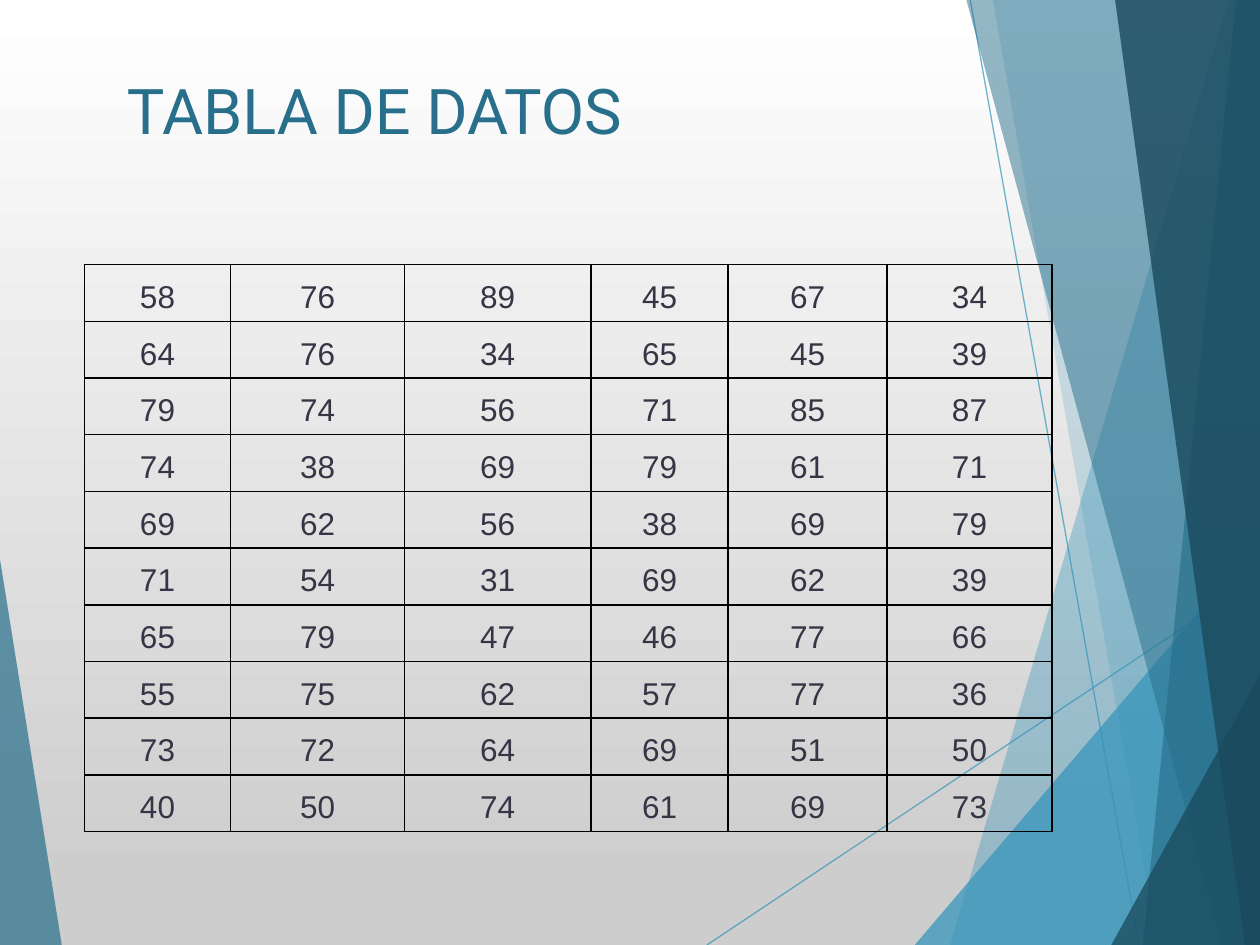
from dataclasses import dataclass

from pptx import Presentation
from pptx import util as u
from pptx.dml.color import RGBColor
from pptx.enum import text
from pptx.enum.shapes import MSO_CONNECTOR
from pptx.oxml import parse_xml
from pptx.oxml.ns import nsdecls, qn
from pptx.oxml.xmlchemy import OxmlElement

WIDTH, HEIGHT = u.Inches(10), u.Inches(7.5)
COLORS = {
    "white": "FFFFFF", "gray": "CDCDCD", "black": "000000", "ink": "373545",
    "blue": "3494BA", "teal": "276F8B", "navy": "1A4A5D",
}
Point = tuple[float, float]


@dataclass(frozen=True)
class Ray:
    """A thin line; points are percentages of the slide's width and height."""
    start: Point
    end: Point


@dataclass(frozen=True)
class Facet:
    """A translucent polygon; points are percentages of the slide's size."""
    color: str
    opacity: int
    points: tuple[Point, ...]


RAYS = (Ray((56.1, 100), (100, 61)), Ray((77, 0), (90.4, 100)))
FACETS = (
    Facet("blue", 36, ((97.5, 0), (75.4, 100), (100, 100), (100, 0))),
    Facet("blue", 20, ((78.8, 0), (91.9, 100), (100, 100), (100, 0))),
    Facet("blue", 72, ((72.6, 100), (100, 57.2), (100, 100))),
    Facet("teal", 50, ((76.7, 0), (97, 100), (100, 100), (100, 0))),
    Facet("teal", 66, ((98.1, 0), (90.7, 100), (100, 100), (100, 0))),
    Facet("navy", 80, ((88.5, 0), (98.8, 100), (100, 100), (100, 0))),
    Facet("navy", 76, ((88.2, 100), (100, 71.4), (100, 100))),
    Facet("teal", 70, ((0, 59.2), (4.9, 100), (0, 100))),
)
COLUMN_WIDTHS = (11.6, 13.8, 14.8, 10.9, 12.6, 13.1)
ROW_HEIGHT = 6
DATA = (
    (58, 76, 89, 45, 67, 34),
    (64, 76, 34, 65, 45, 39),
    (79, 74, 56, 71, 85, 87),
    (74, 38, 69, 79, 61, 71),
    (69, 62, 56, 38, 69, 79),
    (71, 54, 31, 69, 62, 39),
    (65, 79, 47, 46, 77, 66),
    (55, 75, 62, 57, 77, 36),
    (73, 72, 64, 69, 51, 50),
    (40, 50, 74, 61, 69, 73),
)


def across(percent: float) -> int:
    return round(WIDTH * percent / 100)


def down(percent: float) -> int:
    return round(HEIGHT * percent / 100)


def rgb(name: str) -> RGBColor:
    return RGBColor.from_string(COLORS[name])


def set_opacity(shape, percent: int) -> None:
    for color in shape._element.spPr.iter(qn("a:srgbClr")):
        alpha = OxmlElement("a:alpha")
        alpha.set("val", str(percent * 1000))
        color.append(alpha)


def set_font(paragraph, name: str, size: int, color: str) -> None:
    paragraph.font.name = name
    paragraph.font.size = u.Pt(size)
    paragraph.font.color.rgb = rgb(color)


def paint_background(slide) -> None:
    fill = slide.background.fill
    fill.gradient()
    fill.gradient_angle = 270
    for stop, color, position in zip(fill.gradient_stops, ("white", "gray"), (0, 0.94)):
        stop.color.rgb = rgb(color)
        stop.position = position


def draw_ray(slide, ray: Ray) -> None:
    line = slide.shapes.add_connector(
        MSO_CONNECTOR.STRAIGHT,
        across(ray.start[0]), down(ray.start[1]), across(ray.end[0]), down(ray.end[1]))
    line.line.color.rgb = rgb("blue")
    line.line.width = u.Pt(0.75)
    set_opacity(line, 70)
    line._element.spPr.append(OxmlElement("a:effectLst"))


def draw_facet(slide, facet: Facet) -> None:
    first, *rest = [(across(x), down(y)) for x, y in facet.points]
    builder = slide.shapes.build_freeform(*first)
    builder.add_line_segments(rest, close=True)
    shape = builder.convert_to_shape()
    shape.shadow.inherit = False
    shape.fill.solid()
    shape.fill.fore_color.rgb = rgb(facet.color)
    shape.line.fill.background()
    set_opacity(shape, facet.opacity)


def draw_title(slide, title: str) -> None:
    box = slide.shapes.add_textbox(across(9.1), down(6.93), across(76.7), down(18.93))
    box.text_frame.word_wrap = True
    para = box.text_frame.paragraphs[0]
    para.text = title
    set_font(para, "Roboto", 36, "teal")


def add_borders(cell) -> None:
    """Outline all four sides; the lines must precede the cell's fill."""
    properties = cell._tc.get_or_add_tcPr()
    for index, side in enumerate(("lnL", "lnR", "lnT", "lnB")):
        properties.insert(index, parse_xml(
            f'<a:{side} {nsdecls("a")} w="{u.Pt(1)}"><a:solidFill>'
            f'<a:srgbClr val="{COLORS["black"]}"/></a:solidFill></a:{side}>'))


def draw_table(slide) -> None:
    frame = slide.shapes.add_table(
        len(DATA), len(COLUMN_WIDTHS), across(6.7), down(28),
        across(sum(COLUMN_WIDTHS)), down(ROW_HEIGHT * len(DATA)))
    table = frame.table
    table.first_row = table.horz_banding = False
    for column, width in zip(table.columns, COLUMN_WIDTHS):
        column.width = across(width)
    for row, values in zip(table.rows, DATA):
        row.height = down(ROW_HEIGHT)
        for cell, value in zip(row.cells, values):
            cell.text = str(value)
            cell.vertical_anchor = text.MSO_ANCHOR.BOTTOM
            cell.fill.background()
            add_borders(cell)
            para = cell.text_frame.paragraphs[0]
            para.alignment = text.PP_ALIGN.CENTER
            set_font(para, "Arial", 18, "ink")


def main() -> None:
    deck = Presentation()
    deck.slide_width, deck.slide_height = WIDTH, HEIGHT
    page = deck.slides.add_slide(deck.slide_layouts[6])
    paint_background(page)
    for ray in RAYS:
        draw_ray(page, ray)
    for facet in FACETS:
        draw_facet(page, facet)
    draw_title(page, "TABLA DE DATOS")
    draw_table(page)
    deck.save("out.pptx")


if __name__ == "__main__":
    main()
